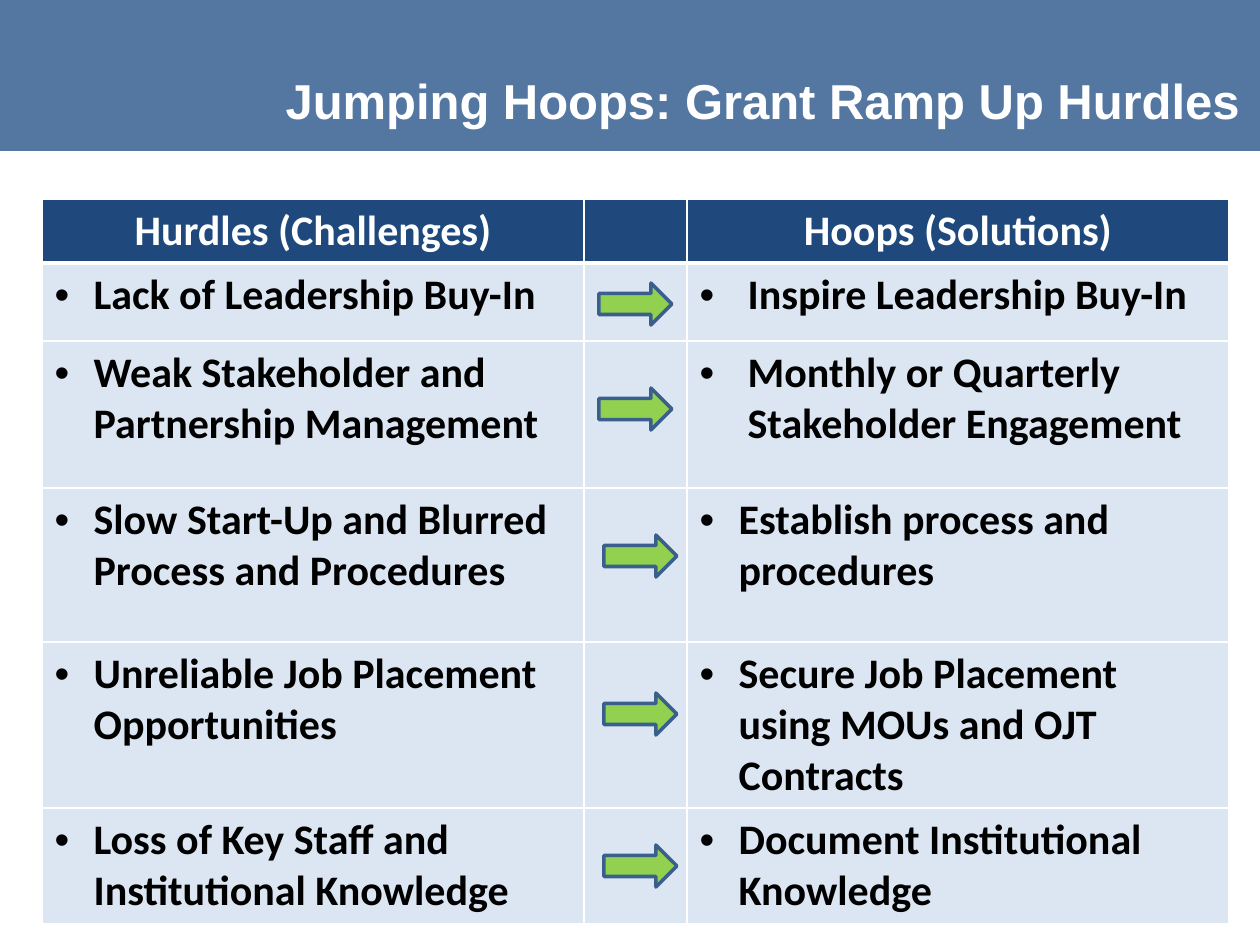
from dataclasses import dataclass

from lxml import etree
from pptx import Presentation
from pptx.dml.color import RGBColor
from pptx.enum.shapes import MSO_SHAPE
from pptx.enum.text import MSO_ANCHOR, PP_ALIGN
from pptx.oxml.ns import qn
from pptx.util import Emu, Pt

RECTANGLE = MSO_SHAPE.RECTANGLE
RIGHT_ARROW = MSO_SHAPE.RIGHT_ARROW
LEFT, CENTER = PP_ALIGN.LEFT, PP_ALIGN.CENTER
TOP = MSO_ANCHOR.TOP

PX_PER_INCH = 126
COLORS = {
    "band": "376092",
    "header": "1F497D",
    "row": "DCE6F2",
    "arrow": "92D050",
    "arrow_line": "3A5F8C",
    "white": "FFFFFF",
    "black": "000000",
}
COLUMN_WIDTHS = (542, 103, 542)
HEADER_HEIGHT = 59
HURDLE_INDENT = 39
ARROW_WIDTH, ARROW_HEIGHT = 73, 42


@dataclass(frozen=True)
class Pairing:
    hurdle: str
    hoop: str
    hoop_indent: int
    row_height: int
    arrow_left: int
    arrow_top: int


PAIRINGS = (
    Pairing("Lack of Leadership Buy-In", "Inspire Leadership Buy-In",
            48, 78, 599, 283),
    Pairing("Weak Stakeholder and Partnership Management",
            "Monthly or Quarterly Stakeholder Engagement", 48, 147, 599, 388),
    Pairing("Slow Start-Up and Blurred Process and Procedures",
            "Establish process and procedures", 39, 147 + 7, 604, 535),
    Pairing("Unreliable Job Placement Opportunities",
            "Secure Job Placement using MOUs and OJT Contracts",
            39, 154, 604, 693),
    Pairing("Loss of Key Staff and Institutional Knowledge",
            "Document Institutional Knowledge", 39, 112, 604, 845),
)


def px(length: int) -> Emu:
    return Emu(round(length * 914400 / PX_PER_INCH))


def rgb(name: str) -> RGBColor:
    return RGBColor.from_string(COLORS[name])


def add_run(paragraph, text: str, font: str, size: int, color: str) -> None:
    run = paragraph.add_run()
    run.text = text
    run.font.name = font
    run.font.size = Pt(size)
    run.font.bold = True
    run.font.color.rgb = rgb(color)


def add_bullet(paragraph, indent: int) -> None:
    properties = paragraph._p.get_or_add_pPr()
    properties.set("marL", str(px(indent)))
    properties.set("indent", str(-px(indent)))
    etree.SubElement(properties, qn("a:buFont"), typeface="Arial")
    etree.SubElement(properties, qn("a:buChar"), char="•")


def style_cell(cell, fill: str, bottom_width: int = 1, top_width: int = 1) -> None:
    properties = cell._tc.get_or_add_tcPr()
    widths = {"lnL": 1, "lnR": 1, "lnT": top_width, "lnB": bottom_width}
    for side, width in widths.items():
        line = etree.SubElement(properties, qn(f"a:{side}"), w=str(Pt(width)))
        solid = etree.SubElement(line, qn("a:solidFill"))
        etree.SubElement(solid, qn("a:srgbClr"), val=COLORS["white"])
    cell.fill.solid()
    cell.fill.fore_color.rgb = rgb(fill)


def add_band(slide) -> None:
    band = slide.shapes.add_shape(RECTANGLE, px(-1), px(0), px(1261), px(151))
    band.shadow.inherit = False
    band.fill.solid()
    band.fill.fore_color.rgb = rgb("band")
    band.line.fill.background()
    color = band._element.spPr.find(f".//{qn('a:srgbClr')}")
    etree.SubElement(color, qn("a:alpha"), val="85000")
    # The band lies behind the title
    slide.shapes._spTree.insert(2, band._element)


def add_title(slide) -> None:
    title = slide.shapes.title
    title.left, title.top = px(273), px(64)
    title.width, title.height = px(987), px(72)
    title.text_frame.vertical_anchor = TOP
    title.text_frame.word_wrap = True
    heading = title.text_frame.paragraphs[0]
    heading.alignment = LEFT
    add_run(heading, "Jumping Hoops: Grant Ramp Up Hurdles", "Arial", 28, "white")


def add_pairing_table(slide) -> None:
    heights = (HEADER_HEIGHT, *(pairing.row_height for pairing in PAIRINGS))
    table = slide.shapes.add_table(
        len(heights), len(COLUMN_WIDTHS), px(42), px(199),
        px(sum(COLUMN_WIDTHS)), px(sum(heights))).table
    for column, width in zip(table.columns, COLUMN_WIDTHS):
        column.width = px(width)
    for row, height in zip(table.rows, heights):
        row.height = px(height)

    # Header row
    for column, label in enumerate(("Hurdles (Challenges)", "", "Hoops (Solutions)")):
        cell = table.cell(0, column)
        style_cell(cell, "header", bottom_width=3)
        if label:
            paragraph = cell.text_frame.paragraphs[0]
            paragraph.alignment = CENTER
            add_run(paragraph, label, "Calibri", 24, "white")

    # Hurdles on the left, hoops on the right
    for row, pairing in enumerate(PAIRINGS, start=1):
        for column in range(len(COLUMN_WIDTHS)):
            style_cell(table.cell(row, column), "row", top_width=3 if row == 1 else 1)
        for column, text, indent in ((0, pairing.hurdle, HURDLE_INDENT),
                                     (2, pairing.hoop, pairing.hoop_indent)):
            paragraph = table.cell(row, column).text_frame.paragraphs[0]
            add_bullet(paragraph, indent)
            add_run(paragraph, text, "Calibri", 24, "black")


def add_arrow(slide, pairing: Pairing) -> None:
    arrow = slide.shapes.add_shape(
        RIGHT_ARROW, px(pairing.arrow_left), px(pairing.arrow_top),
        px(ARROW_WIDTH), px(ARROW_HEIGHT))
    arrow.shadow.inherit = False
    arrow.fill.solid()
    arrow.fill.fore_color.rgb = rgb("arrow")
    arrow.line.color.rgb = rgb("arrow_line")
    arrow.line.width = Pt(2)


def main() -> None:
    presentation = Presentation()
    presentation.slide_width, presentation.slide_height = px(1260), px(945)
    slide = presentation.slides.add_slide(presentation.slide_layouts[5])
    add_band(slide)
    add_title(slide)
    add_pairing_table(slide)
    for pairing in PAIRINGS:
        add_arrow(slide, pairing)
    presentation.save("out.pptx")


if __name__ == "__main__":
    main()
